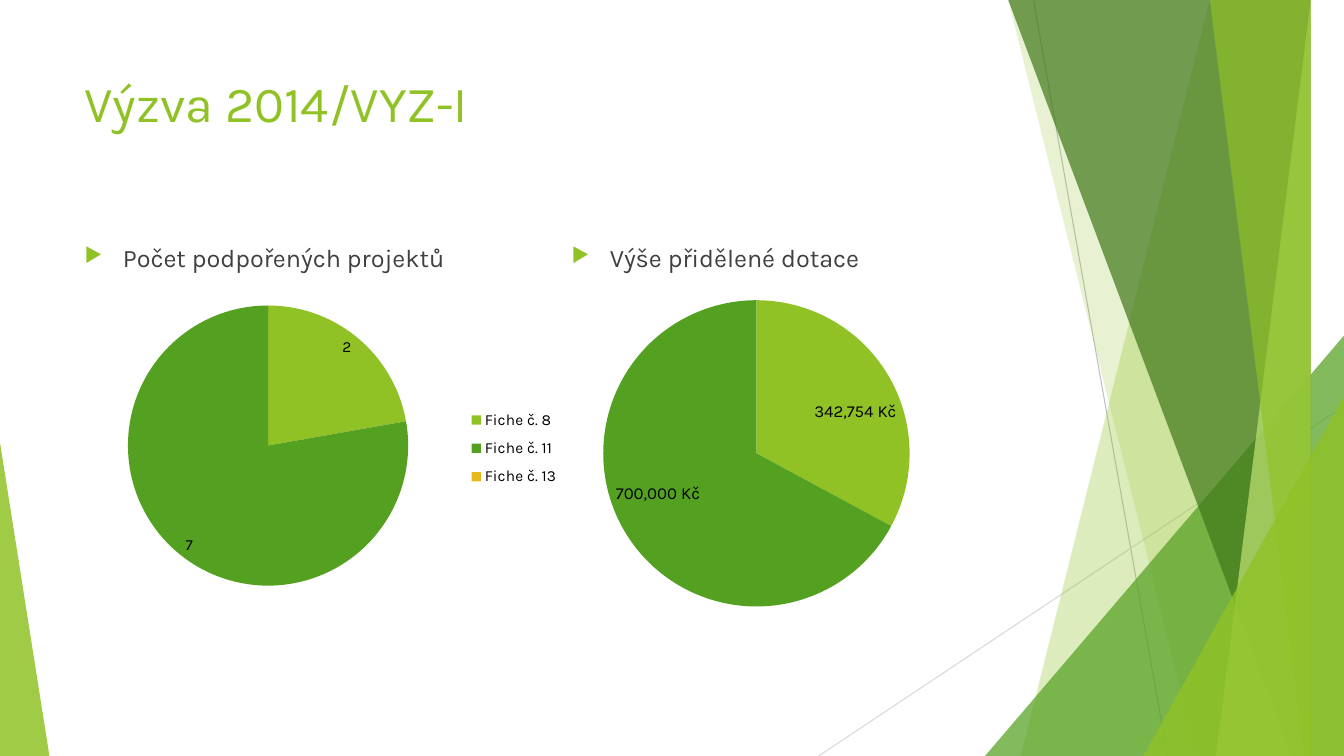
"""Build the slide comparing supported projects and granted subsidies of one call."""
from dataclasses import dataclass

import pptx
import pptx.chart.data
import pptx.dml.color
import pptx.enum.chart
import pptx.enum.shapes
import pptx.enum.text
import pptx.oxml
import pptx.oxml.ns
import pptx.util
from lxml import etree

RGBColor = pptx.dml.color.RGBColor
Inches = pptx.util.Inches
Pt = pptx.util.Pt
qn = pptx.oxml.ns.qn

LIME = RGBColor(0x90, 0xC2, 0x26)
GREEN = RGBColor(0x54, 0xA0, 0x21)
DARK_GREEN = RGBColor(0x3F, 0x78, 0x19)
PALE_LIME = RGBColor(0xC0, 0xE4, 0x74)
GOLD = RGBColor(0xE6, 0xB9, 0x1E)
TEXT_GRAY = RGBColor(0x40, 0x40, 0x40)
RAY_GRAY = RGBColor(0xBF, 0xBF, 0xBF)
LIGHT_RAY_GRAY = RGBColor(0xD9, 0xD9, 0xD9)
BLACK = RGBColor(0, 0, 0)

FONT = "Karla"
WIDTH, HEIGHT = 13.33, 7.5
BAND_TOP = -0.01
SLICE_COLORS = (LIME, GREEN, GOLD)


@dataclass(frozen=True)
class Ray:
    start: tuple[float, float]
    end: tuple[float, float]
    color: RGBColor


@dataclass(frozen=True)
class Band:
    top_left: float
    bottom_left: float
    color: RGBColor
    opacity: int


@dataclass(frozen=True)
class Wedge:
    box: tuple[float, float, float, float]
    apex: float
    color: RGBColor
    opacity: int


@dataclass(frozen=True)
class Caption:
    box: tuple[float, float, float, float]
    text: str
    size: int
    color: RGBColor
    bulleted: bool


@dataclass(frozen=True)
class Pie:
    box: tuple[float, float, float, float]
    disc: tuple[float, float, float, float]
    categories: tuple[str, ...]
    values: tuple[int, ...]
    font_size: int
    label_size: int
    number_format: str
    legend: tuple[float, float, float, float] | None = None


RAYS = (
    Ray((10.25, 0), (11.58, HEIGHT), RAY_GRAY),
    Ray((WIDTH, 4.03), (8.12, HEIGHT), LIGHT_RAY_GRAY),
)
FACETS = (
    Band(12.28, 10.04, LIME, 30),
    Band(10.5, 11.83, LIME, 20),
    Wedge((9.77, 3.33, 3.56, 4.17), 1, GREEN, 72),
    Band(10.21, 12.91, DARK_GREEN, 70),
    Band(13.03, 11.92, PALE_LIME, 70),
    Band(11.96, 13.18, LIME, 65),
    Wedge((11.34, 3.93, 1.99, 3.57), 1, LIME, 80),
    Wedge((0, 4.39, 0.49, 3.11), 0, LIME, 85),
)
CAPTIONS = (
    Caption((0.74, 0.67, 9.4, 1.44), "Výzva 2014/VYZ-I", 36, LIME, False),
    Caption((0.74, 2.36, 4.58, 4.24), "Počet podpořených projektů", 18, TEXT_GRAY, True),
    Caption((5.57, 2.36, 4.58, 4.24), "Výše přidělené dotace", 18, TEXT_GRAY, True),
)
PIES = (
    Pie((4.86, 2.84, 5.27, 3.31), (5.98, 2.98, 3.04, 3.04), ("1", "2", "3"),
        (342754, 700000, 0), 10, 12, '#,##0\\ "Kč"'),
    Pie((0.53, 2.81, 5.27, 3.21), (1.27, 3.03, 2.78, 2.78),
        ("Fiche č. 8", "Fiche č. 11", "Fiche č. 13"), (2, 7, 0), 11, 11, "General",
        legend=(4.6, 3.98, 1.0, 0.94)),
)


def draw_ray(shapes, ray: Ray) -> None:
    line = shapes.add_connector(pptx.enum.shapes.MSO_CONNECTOR.STRAIGHT,
                                *map(Inches, ray.start + ray.end))
    line.line.color.rgb = ray.color
    line.line.width = Pt(0.75)
    etree.SubElement(line._element.spPr, qn("a:effectLst"))


def draw_facet(shapes, facet: Band | Wedge) -> None:
    if isinstance(facet, Band):
        outline = shapes.build_freeform(facet.top_left, BAND_TOP, scale=Inches(1))
        outline.add_line_segments(
            [(WIDTH, BAND_TOP), (WIDTH, HEIGHT), (facet.bottom_left, HEIGHT)], close=True)
        shape = outline.convert_to_shape()
    else:
        shape = shapes.add_shape(pptx.enum.shapes.MSO_SHAPE.ISOSCELES_TRIANGLE,
                                 *map(Inches, facet.box))
        shape.adjustments[0] = facet.apex
    shape.shadow.inherit = False
    shape.line.fill.background()
    shape.fill.solid()
    shape.fill.fore_color.rgb = facet.color
    color = shape._element.spPr.find(qn("a:solidFill"))[0]
    etree.SubElement(color, qn("a:alpha"), val=str(facet.opacity * 1000))


def add_bullet(paragraph) -> None:
    paragraph.space_before = Pt(10)
    properties = paragraph._p.get_or_add_pPr()
    properties.set("marL", str(Inches(0.38)))
    properties.set("indent", str(Inches(-0.38)))
    bullet_color = etree.SubElement(properties, qn("a:buClr"))
    etree.SubElement(bullet_color, qn("a:srgbClr"), val=str(LIME))
    etree.SubElement(properties, qn("a:buSzPct"), val="80000")
    etree.SubElement(properties, qn("a:buChar"), char="▶")


def draw_caption(shapes, caption: Caption) -> None:
    frame = shapes.add_textbox(*map(Inches, caption.box)).text_frame
    frame.word_wrap = True
    frame.vertical_anchor = pptx.enum.text.MSO_ANCHOR.TOP
    frame.text = caption.text
    paragraph = frame.paragraphs[0]
    font = paragraph.runs[0].font
    font.name, font.size, font.color.rgb = FONT, Pt(caption.size), caption.color
    if caption.bulleted:
        add_bullet(paragraph)


def place_part(part, chart_box: tuple, part_box: tuple, inner: bool) -> None:
    for old in part.findall(qn("c:layout")):
        part.remove(old)
    layout = etree.Element(qn("c:layout"))
    manual = etree.SubElement(layout, qn("c:manualLayout"))
    left, top, width, height = chart_box
    x, y, w, h = part_box
    settings = {"layoutTarget": "inner"} if inner else {}
    settings |= {"xMode": "edge", "yMode": "edge",
                 "x": (x - left) / width, "y": (y - top) / height,
                 "w": w / width, "h": h / height}
    for tag, value in settings.items():
        text = value if isinstance(value, str) else f"{value:.3f}"
        etree.SubElement(manual, qn(f"c:{tag}"), val=text)
    part.insert(0 if inner else 1, layout)


def draw_pie(shapes, pie: Pie) -> None:
    data = pptx.chart.data.CategoryChartData(number_format=pie.number_format)
    data.categories = pie.categories
    data.add_series("Series 1", pie.values)
    chart = shapes.add_chart(pptx.enum.chart.XL_CHART_TYPE.PIE,
                             *map(Inches, pie.box), data).chart
    chart.has_title = False
    chart.font.name, chart.font.size = FONT, Pt(pie.font_size)
    chart.font.color.rgb = BLACK
    plot = chart.plots[0]
    plot.vary_by_categories = True
    series = plot.series[0]
    for index, color in enumerate(SLICE_COLORS):
        fill = series.points[index].format.fill
        fill.solid()
        fill.fore_color.rgb = color
    labels = series.data_labels
    labels.show_value = True
    labels.number_format, labels.number_format_is_linked = pie.number_format, False
    labels.font.name, labels.font.size = FONT, Pt(pie.label_size)
    labels.font.color.rgb = BLACK
    hidden = etree.Element(qn("c:dLbl"))
    etree.SubElement(hidden, qn("c:idx"), val=str(pie.values.index(0)))
    etree.SubElement(hidden, qn("c:delete"), val="1")
    labels._element.insert(0, hidden)
    place_part(chart._chartSpace.chart.plotArea, pie.box, pie.disc, inner=True)
    chart.has_legend = pie.legend is not None
    if pie.legend:
        chart.legend.position = pptx.enum.chart.XL_LEGEND_POSITION.RIGHT
        chart.legend.include_in_layout = False
        chart.legend.font.size = Pt(pie.font_size)
        place_part(chart.legend._element, pie.box, pie.legend, inner=False)


def main() -> None:
    deck = pptx.Presentation()
    deck.slide_width, deck.slide_height = Inches(WIDTH), Inches(HEIGHT)
    shapes = deck.slides.add_slide(deck.slide_layouts[6]).shapes
    for items, draw in ((RAYS, draw_ray), (FACETS, draw_facet),
                        (CAPTIONS, draw_caption), (PIES, draw_pie)):
        for item in items:
            draw(shapes, item)
    deck.save("out.pptx")


if __name__ == "__main__":
    main()
